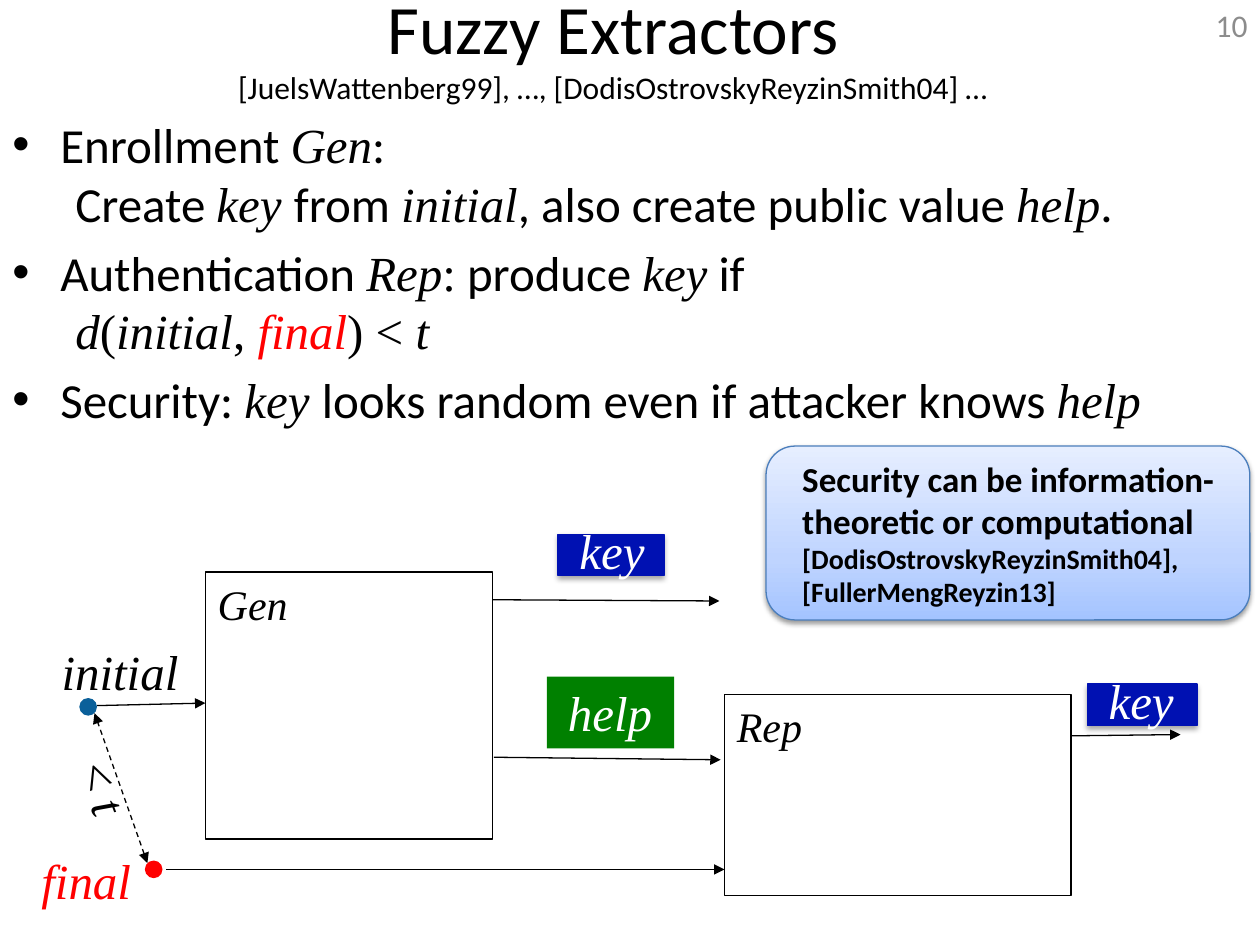
from functools import partial

from lxml import etree
from pptx import Presentation
from pptx.dml.color import RGBColor
from pptx.enum.dml import MSO_LINE
from pptx.enum.shapes import MSO_CONNECTOR, MSO_SHAPE
from pptx.enum.text import MSO_ANCHOR, MSO_AUTO_SIZE, PP_ALIGN
from pptx.oxml.ns import qn
from pptx.util import Inches, Pt

BLACK = RGBColor(0x00, 0x00, 0x00)
WHITE = RGBColor(0xFF, 0xFF, 0xFF)
RED = RGBColor(0xFF, 0x00, 0x00)
GREEN = RGBColor(0x00, 0x80, 0x00)
KEY_BLUE = RGBColor(0x00, 0x11, 0xB2)
DOT_BLUE = RGBColor(0x0B, 0x60, 0x9A)
NOTE_EDGE = RGBColor(0x4B, 0x7E, 0xBC)
GRAY = RGBColor(0x8C, 0x8C, 0x8C)
NOTE_STOPS = ((0, "A4C4FF"), (35, "BFD4FF"), (100, "E6EEFF"))
SANS, SERIF = "Calibri", "Times New Roman"


def child(parent, tag, **attributes):
    """Append a DrawingML element with the given attributes."""
    element = etree.SubElement(parent, qn(tag))
    for name, value in attributes.items():
        element.set(name, str(value))
    return element


def write(paragraph, text, size=28, font=SANS, color=BLACK, italic=False, bold=False):
    """Add formatted text to a paragraph, with newlines as line breaks."""
    for index, line in enumerate(text.split("\n")):
        if index:
            paragraph.add_line_break()
        if line:
            run = paragraph.add_run()
            run.text = line
            run.font.size = Pt(size)
            run.font.name = font
            run.font.color.rgb = color
            run.font.italic = italic
            run.font.bold = bold


serif = partial(write, font=SERIF)
term = partial(write, font=SERIF, italic=True)


def add_text(slide, left, top, width, height, wrap=True, anchor=MSO_ANCHOR.TOP,
             align=PP_ALIGN.LEFT):
    """Add a text box and return its frame."""
    frame = slide.shapes.add_textbox(
        Inches(left), Inches(top), Inches(width), Inches(height)).text_frame
    frame.word_wrap = wrap
    frame.auto_size = MSO_AUTO_SIZE.NONE if wrap else MSO_AUTO_SIZE.SHAPE_TO_FIT_TEXT
    frame.vertical_anchor = anchor
    frame.paragraphs[0].alignment = align
    return frame


def add_label(slide, text, left, top, width, height=0.57, **style):
    """Add an unwrapped italic label."""
    frame = add_text(slide, left, top, width, height, wrap=False)
    term(frame.paragraphs[0], text, **style)


def add_figure(slide, kind, left, top, width, height, fill=None, line=None):
    """Add a flat preset shape."""
    figure = slide.shapes.add_shape(
        kind, Inches(left), Inches(top), Inches(width), Inches(height))
    figure.shadow.inherit = False
    if fill is None:
        figure.fill.background()
    else:
        figure.fill.solid()
        figure.fill.fore_color.rgb = fill
    if line is None:
        figure.line.fill.background()
    else:
        figure.line.color.rgb = line
        figure.line.width = Pt(0.75)
    return figure


def add_shadow(figure, opacity, distance):
    """Give a shape a soft shadow straight below it."""
    effects = figure._element.spPr.find(qn("a:effectLst"))
    shadow = child(effects, "a:outerShdw", blurRad=Pt(3.1), dist=Pt(distance),
                   dir=90 * 60000, rotWithShape=0)
    color = child(shadow, "a:srgbClr", val="000000")
    child(color, "a:alpha", val=opacity * 1000)


def add_arrow(slide, start, end, two_way=False):
    """Add an arrow; a two-way arrow is dashed."""
    arrow = slide.shapes.add_connector(
        MSO_CONNECTOR.STRAIGHT, *(Inches(value) for value in (*start, *end)))
    arrow.line.color.rgb = BLACK
    arrow.line.width = Pt(0.75)
    if two_way:
        arrow.line.dash_style = MSO_LINE.DASH
    outline = arrow.line._get_or_add_ln()
    for tag in ("a:headEnd", "a:tailEnd") if two_way else ("a:tailEnd",):
        child(outline, tag, type="triangle", w="med", len="med")
    child(arrow._element.spPr, "a:effectLst")


def add_key(slide, left, top, width):
    """Add a blue key tag with its label."""
    tag = add_figure(slide, MSO_SHAPE.RECTANGLE, left, top, width, 0.33, KEY_BLUE, KEY_BLUE)
    add_shadow(tag, 35, 1.8)
    add_label(slide, "key", left + 0.07, top - 0.16, 0.78, color=WHITE)


def add_procedure(slide, name, left, top, width, height):
    """Add an outlined procedure box with its name in the corner."""
    add_figure(slide, MSO_SHAPE.RECTANGLE, left, top, width, height, line=BLACK)
    add_label(slide, name, left, top, 0.87, 0.5, size=24)


def add_heading(slide):
    """Add the title, its citations and the page number."""
    title = add_text(slide, -0.54, -0.11, 10.81, 0.94, anchor=MSO_ANCHOR.MIDDLE,
                     align=PP_ALIGN.CENTER).paragraphs[0]
    write(title, "Fuzzy Extractors\n", size=39.6)
    write(title, "[JuelsWattenberg99], …, [DodisOstrovskyReyzinSmith04] …", size=18)
    page = add_text(slide, 7.67, 0, 2.33, 0.4, anchor=MSO_ANCHOR.MIDDLE, align=PP_ALIGN.RIGHT)
    write(page.paragraphs[0], "10", size=18, color=GRAY)


def add_points(slide):
    """Add the three bulleted points."""
    points = (
        ((write, "Enrollment "), (term, "Gen"), (write, ": \n\tCreate "), (term, "key "),
         (write, "from "), (term, "initial"), (write, ", also create public value "),
         (term, "help"), (write, ".")),
        ((write, "Authentication "), (term, "Rep"), (serif, ":"), (write, " produce "),
         (term, "key"), (write, " if \n\t"), (term, "d"), (serif, "("), (term, "initial"),
         (serif, ", "), (partial(term, color=RED), "final"), (serif, ") < "), (term, "t")),
        ((write, "Security: "), (term, "key "),
         (write, "looks random even if attacker knows "), (term, "help")),
    )
    frame = add_text(slide, 0, 0.86, 10.39, 3.12)
    for index, parts in enumerate(points):
        point = frame.add_paragraph() if index else frame.paragraphs[0]
        point.space_before = Pt(5.6)
        layout = point._p.get_or_add_pPr()
        layout.set("marL", str(Inches(0.38)))
        layout.set("indent", str(Inches(-0.38)))
        child(layout, "a:buFont", typeface="Arial")
        child(layout, "a:buChar", char="•")
        child(child(layout, "a:tabLst"), "a:tab", pos=Inches(0.5), algn="l")
        for style, text in parts:
            style(point, text)


def add_note(slide):
    """Add the rounded remark on security."""
    note = add_figure(slide, MSO_SHAPE.ROUNDED_RECTANGLE, 6.08, 3.54, 3.84, 1.38, line=NOTE_EDGE)
    note.fill.gradient()
    note.fill.gradient_angle = 90
    stops = note._element.spPr.find(qn("a:gradFill")).find(qn("a:gsLst"))
    stops.clear()
    for position, color in NOTE_STOPS:
        child(child(stops, "a:gs", pos=position * 1000), "a:srgbClr", val=color)
    add_shadow(note, 38, 1.6)
    frame = note.text_frame
    frame.word_wrap = True
    frame.vertical_anchor = MSO_ANCHOR.MIDDLE
    frame.margin_left = frame.margin_right = Inches(0.05)
    frame.margin_top = frame.margin_bottom = Inches(0.05)
    remark = frame.paragraphs[0]
    remark.alignment = PP_ALIGN.LEFT
    remark._p.get_or_add_pPr().set("marL", str(Inches(0.17)))
    write(remark, "Security can be information-theoretic or computational ", size=20, bold=True)
    write(remark, "[DodisOstrovskyReyzinSmith04], [FullerMengReyzin13]", size=16, bold=True)


def add_diagram(slide):
    """Add the flow from the two readings to the keys."""
    add_procedure(slide, "Gen", 1.63, 4.54, 2.28, 2.12)
    add_procedure(slide, "Rep", 5.75, 5.51, 2.75, 1.6)
    for start, end in (((0.77, 5.6), (1.63, 5.58)), ((3.91, 4.76), (5.71, 4.77)),
                       ((3.92, 6.01), (5.72, 6.03)), ((1.32, 6.9), (5.75, 6.9)),
                       ((8.51, 5.84), (9.37, 5.83))):
        add_arrow(slide, start, end)
    add_arrow(slide, (1.17, 6.85), (0.75, 5.66), two_way=True)
    add_figure(slide, MSO_SHAPE.OVAL, 0.63, 5.54, 0.14, 0.14, DOT_BLUE)
    add_figure(slide, MSO_SHAPE.OVAL, 1.15, 6.83, 0.14, 0.14, RED)
    add_label(slide, "initial", 0.39, 5.04, 1.18)
    add_label(slide, "final", 0.23, 6.7, 1.02, color=RED)
    distance = slide.shapes.add_textbox(Inches(0.51), Inches(5.98), Inches(0.65), Inches(0.57))
    distance.rotation = 69.7
    distance.text_frame.word_wrap = False
    serif(distance.text_frame.paragraphs[0], "< ")
    term(distance.text_frame.paragraphs[0], "t")
    add_figure(slide, MSO_SHAPE.RECTANGLE, 4.34, 5.37, 1.01, 0.57, GREEN)
    add_label(slide, "help", 4.41, 5.37, 0.87, color=WHITE)
    add_key(slide, 4.43, 4.24, 0.84)
    add_key(slide, 8.63, 5.43, 0.87)


def main():
    """Build and save the slide."""
    deck = Presentation()
    deck.slide_width, deck.slide_height = Inches(10), Inches(7.5)
    slide = deck.slides.add_slide(deck.slide_layouts[6])
    add_heading(slide)
    add_points(slide)
    add_diagram(slide)
    add_note(slide)
    deck.save("out.pptx")


if __name__ == "__main__":
    main()
